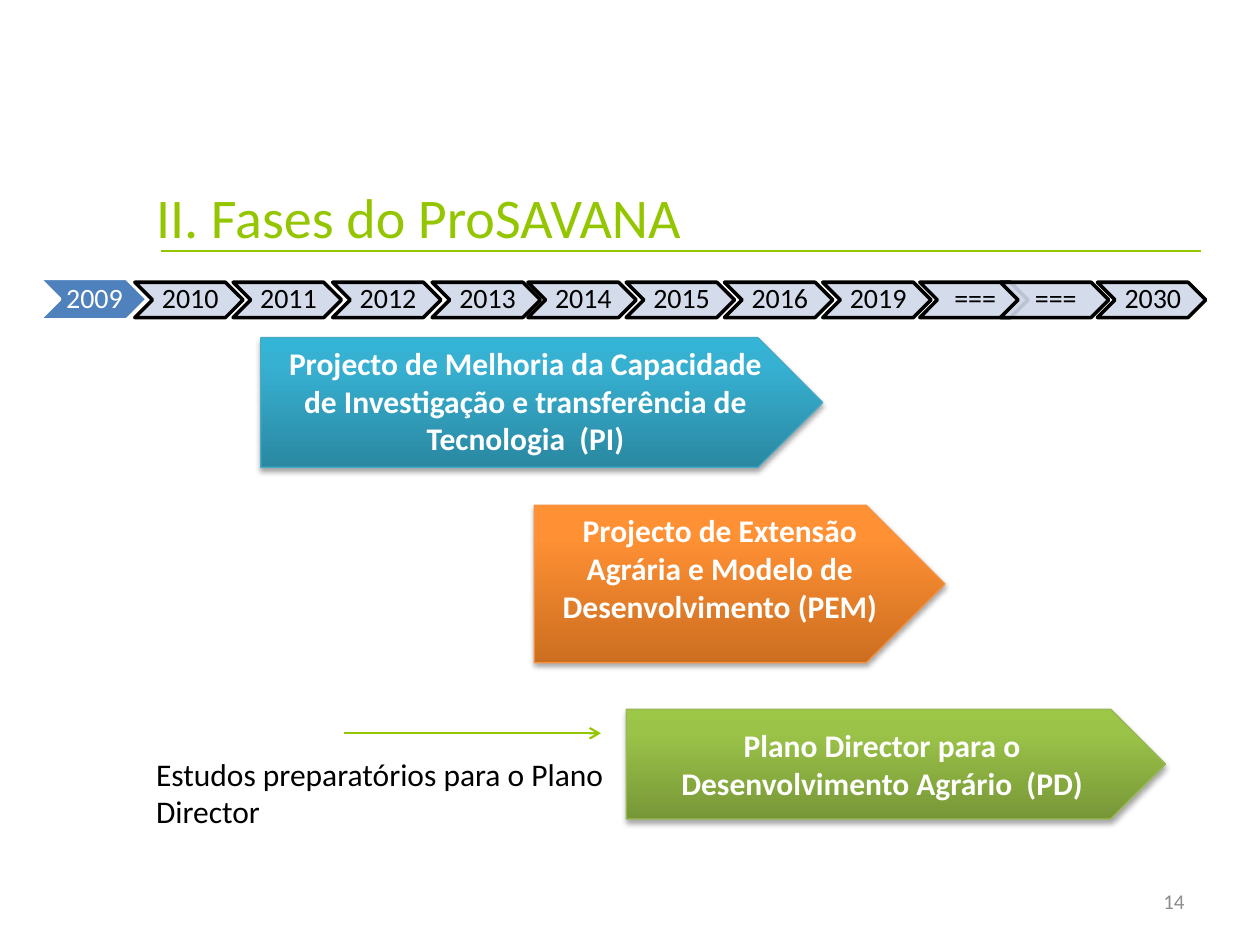
from copy import deepcopy
from typing import NamedTuple, Optional

from lxml.etree import SubElement
from pptx import Presentation
from pptx.dml.color import RGBColor
from pptx.enum.shapes import MSO_CONNECTOR, MSO_SHAPE
from pptx.enum.text import MSO_ANCHOR as Anchor, PP_ALIGN as Align
from pptx.oxml.ns import qn
from pptx.util import Emu, Pt

PX = 9144  # 100 px to the inch
FONT = "Calibri"
WHITE = RGBColor(0xFF, 0xFF, 0xFF)
BLACK = RGBColor(0x00, 0x00, 0x00)
GREY = RGBColor(0x8C, 0x8C, 0x8C)
LIME = RGBColor(0x94, 0xC6, 0x00)
BLUE = RGBColor(0x4F, 0x81, 0xBD)
PALE_BLUE = RGBColor(0xD0, 0xD8, 0xE8)
TEAL = [RGBColor.from_string(c) for c in ("2A88A2", "37B1D2", "34B4D6")]
ORANGE = [RGBColor.from_string(c) for c in ("CC6E20", "FF9034", "FF9136")]
GREEN = [RGBColor.from_string(c) for c in ("779737", "9BC348", "9DC746")]
TEAL_EDGE = RGBColor(0x46, 0xAA, 0xC5)
ORANGE_EDGE = RGBColor(0xF6, 0x92, 0x40)
GREEN_EDGE = RGBColor(0x98, 0xB9, 0x55)
STOP_POSITIONS = (0, 0.8, 1)


class Box(NamedTuple):
    left: int
    top: int
    width: int
    height: int


class Year(NamedTuple):
    text: str
    box: Box
    fill: RGBColor = PALE_BLUE
    line: RGBColor = BLACK
    color: RGBColor = BLACK
    opacity: Optional[int] = 90


class Phase(NamedTuple):
    text: str
    box: Box
    stops: list[RGBColor]
    edge: RGBColor
    anchor: Anchor = Anchor.TOP


class Label(NamedTuple):
    text: str
    box: Box
    size: int
    color: RGBColor
    anchor: Anchor = Anchor.TOP
    align: Align = Align.LEFT


class Rule(NamedTuple):
    left: int
    right: int
    y: int
    arrow: bool = False


YEAR_STARTS = {107: "2010", 185: "2011", 264: "2012", 343: "2013", 419: "2014", 497: "2015",
               575: "2016", 653: "2019", 730: "===", 794: "===", 871: "2030"}
YEARS = [Year("2009", Box(31, 221, 86, 33), BLUE, WHITE, WHITE, None)] + [
    Year(text, Box(left, 224, 86, 28)) for left, text in YEAR_STARTS.items()]
PHASES = [
    Phase("Projecto de Melhoria da Capacidade de Investigação e transferência de Tecnologia  (PI)",
          Box(207, 268, 446, 103), TEAL, TEAL_EDGE),
    Phase("Projecto de Extensão Agrária e Modelo de Desenvolvimento (PEM)",
          Box(424, 401, 326, 125), ORANGE, ORANGE_EDGE),
    Phase("Plano Director para o Desenvolvimento Agrário  (PD)",
          Box(497, 563, 428, 87), GREEN, GREEN_EDGE, Anchor.MIDDLE),
]
LABELS = [
    Label("II. Fases do ProSAVANA", Box(114, 78, 768, 125), 32, LIME, Anchor.BOTTOM),
    Label("Estudos preparatórios para o Plano Director", Box(114, 594, 403, 71), 18, BLACK),
    Label("14", Box(717, 695, 233, 40), 12, GREY, Anchor.MIDDLE, Align.RIGHT),
]
RULES = [Rule(128, 953, 199), Rule(273, 477, 582, arrow=True)]


def emu(box: Box) -> list[Emu]:
    return [Emu(v * PX) for v in box]


def set_all(target, values: dict) -> None:
    for name, value in values.items():
        setattr(target, name, value)


def write(sp, text: str, size: int, color: RGBColor, align: Align, frame: dict, bold=False):
    """Fill the only paragraph of a shape and return it."""
    set_all(sp.text_frame, {"word_wrap": True, **frame})
    p = sp.text_frame.paragraphs[0]
    p.alignment = align
    r = p.add_run()
    r.text = text
    set_all(r.font, {"name": FONT, "size": Pt(size), "bold": bold})
    r.font.color.rgb = color
    return p


def add_year(s, year: Year) -> None:
    sp = s.shapes.add_shape(MSO_SHAPE.CHEVRON, *emu(year.box))
    sp.shadow.inherit = False
    sp.fill.solid()
    sp.fill.fore_color.rgb = year.fill
    if year.opacity is not None:
        clr = sp._element.spPr.find(qn("a:solidFill"))[0]
        SubElement(clr, qn("a:alpha"), val=str(year.opacity * 1000))
    sp.line.color.rgb = year.line
    sp.line.width = Pt(2)
    frame = {"vertical_anchor": Anchor.MIDDLE, "word_wrap": False, "margin_left": 2 * PX,
             "margin_right": 0, "margin_top": PX, "margin_bottom": PX}
    p = write(sp, year.text, 16, year.color, Align.CENTER, frame)
    p.line_spacing = 0.9


def add_soft_shadow(sp) -> None:
    sp.shadow.inherit = False
    effects = sp._element.spPr.find(qn("a:effectLst"))
    shadow = SubElement(effects, qn("a:outerShdw"), blurRad=str(Pt(3.1)), dist=str(Pt(1.8)),
                        dir="5400000", rotWithShape="0")
    clr = SubElement(shadow, qn("a:srgbClr"), val=str(BLACK))
    SubElement(clr, qn("a:alpha"), val="35000")


def fill_upwards(sp, colors: list[RGBColor]) -> None:
    """Gradient running from the bottom edge to the top edge."""
    sp.fill.gradient()
    sp.fill.gradient_angle = 90
    stops = sp._element.spPr.find(qn("a:gradFill")).find(qn("a:gsLst"))
    stops.append(deepcopy(stops[0]))
    for stop, position, color in zip(sp.fill.gradient_stops, STOP_POSITIONS, colors):
        stop.position = position
        stop.color.rgb = color


def add_phase(s, phase: Phase) -> None:
    sp = s.shapes.add_shape(MSO_SHAPE.PENTAGON, *emu(phase.box))
    fill_upwards(sp, phase.stops)
    sp.line.color.rgb = phase.edge
    sp.line.width = Pt(0.75)
    add_soft_shadow(sp)
    write(sp, phase.text, 18, WHITE, Align.CENTER, {"vertical_anchor": phase.anchor}, bold=True)


def add_label(s, label: Label) -> None:
    sp = s.shapes.add_textbox(*emu(label.box))
    write(sp, label.text, label.size, label.color, label.align,
          {"vertical_anchor": label.anchor})


def add_rule(s, rule: Rule) -> None:
    ends = [Emu(v * PX) for v in (rule.left, rule.y, rule.right, rule.y)]
    line = s.shapes.add_connector(MSO_CONNECTOR.STRAIGHT, *ends)
    line.line.color.rgb = LIME
    line.line.width = Pt(1.25)
    if rule.arrow:
        SubElement(line.line._get_or_add_ln(), qn("a:tailEnd"), type="arrow")
    SubElement(line._element.spPr, qn("a:effectLst"))


def main() -> None:
    prs = Presentation()
    set_all(prs, {"slide_width": Emu(1000 * PX), "slide_height": Emu(750 * PX)})
    s = prs.slides.add_slide(prs.slide_layouts[6])
    for draw, items in ((add_rule, RULES), (add_year, YEARS),
                        (add_phase, PHASES), (add_label, LABELS)):
        for item in items:
            draw(s, item)
    prs.save("out.pptx")


if __name__ == "__main__":
    main()
